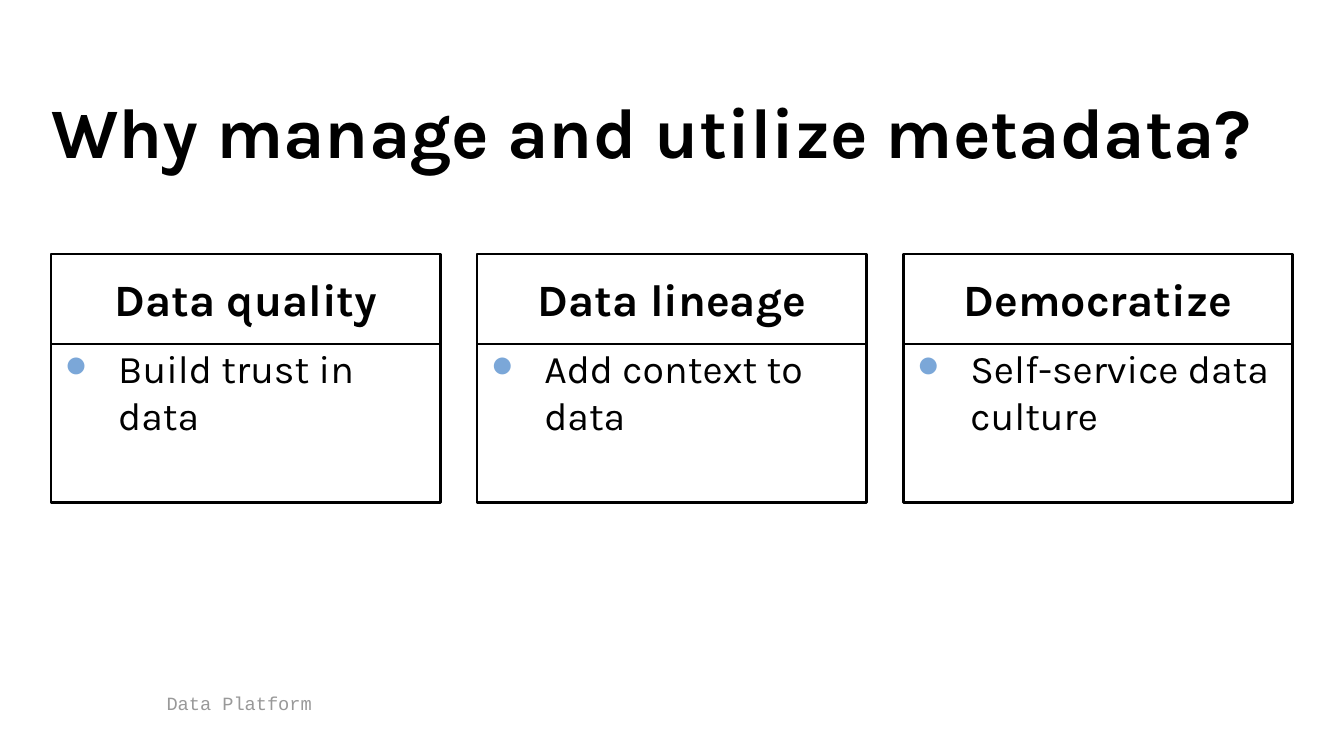
import pptx
import pptx.util
import pptx.dml.color
import pptx.enum.shapes
import pptx.enum.text
import pptx.oxml
import pptx.oxml.ns
import lxml.etree

Inches, Pt = pptx.util.Inches, pptx.util.Pt
RGBColor = pptx.dml.color.RGBColor
Align, Anchor = pptx.enum.text.PP_ALIGN, pptx.enum.text.MSO_ANCHOR

TITLE = "Why manage and utilize metadata?"
CARDS = [
    ("Data quality", "Build trust in data"),
    ("Data lineage", "Add context to data"),
    ("Democratize", "Self-service data culture"),
]
FOOTER = "Data Platform"

BLACK = RGBColor(0x00, 0x00, 0x00)
GRAY = RGBColor(0x99, 0x99, 0x99)
BULLET_BLUE = RGBColor(0x7B, 0xA7, 0xD8)

LEFT, CARD_TOP = 0.38, 1.89
CARD_WIDTH, CARD_STEP = 2.9, 3.17
HEAD_HEIGHT, BODY_HEIGHT = 0.67, 1.18


def write(shape, text, size, font="Karla", color=BLACK, bold=False,
          align=Align.LEFT, anchor=Anchor.TOP, inset=0):
    """Fill the shape with one formatted paragraph and return it."""
    frame = shape.text_frame
    frame.text = text
    frame.word_wrap = True
    frame.auto_size = pptx.enum.text.MSO_AUTO_SIZE.NONE
    frame.vertical_anchor = anchor
    frame.margin_left = frame.margin_right = Inches(inset)
    frame.margin_top = frame.margin_bottom = Inches(inset)
    para = frame.paragraphs[0]
    para.alignment = align
    span = para.runs[0]
    span.font.size = Pt(size)
    span.font.name = font
    span.font.bold = bold
    span.font.color.rgb = color
    return para


def add_bullet(para, indent, hanging):
    properties = para._p.get_or_add_pPr()
    properties.set("marL", str(Inches(indent)))
    properties.set("indent", str(-Inches(hanging)))
    qn = pptx.oxml.ns.qn
    color = lxml.etree.SubElement(properties, qn("a:buClr"))
    lxml.etree.SubElement(color, qn("a:srgbClr")).set("val", str(BULLET_BLUE))
    lxml.etree.SubElement(properties, qn("a:buFont")).set("typeface", "Courier New")
    lxml.etree.SubElement(properties, qn("a:buChar")).set("char", "●")


def add_box(page, left, top, height):
    box = page.shapes.add_shape(
        pptx.enum.shapes.MSO_SHAPE.RECTANGLE,
        Inches(left), Inches(top), Inches(CARD_WIDTH), Inches(height))
    box.shadow.inherit = False
    box.fill.background()
    box.line.color.rgb = BLACK
    box.line.width = Pt(1.5)
    return box


def main():
    deck = pptx.Presentation()
    deck.slide_width = Inches(10)
    deck.slide_height = deck.slide_width * 9 // 16
    page = deck.slides.add_slide(deck.slide_layouts[5])

    title = page.shapes.title
    title.left, title.top = Inches(LEFT), Inches(0.65)
    title.width, title.height = Inches(9.3), Inches(0.67)
    write(title, TITLE, 38, bold=True)

    for column, (heading, point) in enumerate(CARDS):
        left = LEFT + column * CARD_STEP
        head = add_box(page, left, CARD_TOP, HEAD_HEIGHT)
        write(head, heading, 24, bold=True, align=Align.CENTER, anchor=Anchor.MIDDLE)
        body = add_box(page, left, CARD_TOP + HEAD_HEIGHT, BODY_HEIGHT)
        add_bullet(write(body, point, 21), indent=0.5, hanging=0.4)

    footer = page.shapes.add_textbox(
        Inches(1.17), Inches(5.08), Inches(1.76), Inches(0.36))
    write(footer, FOOTER, 10, font="Courier New", color=GRAY, inset=0.07)

    deck.save("out.pptx")


if __name__ == "__main__":
    main()
